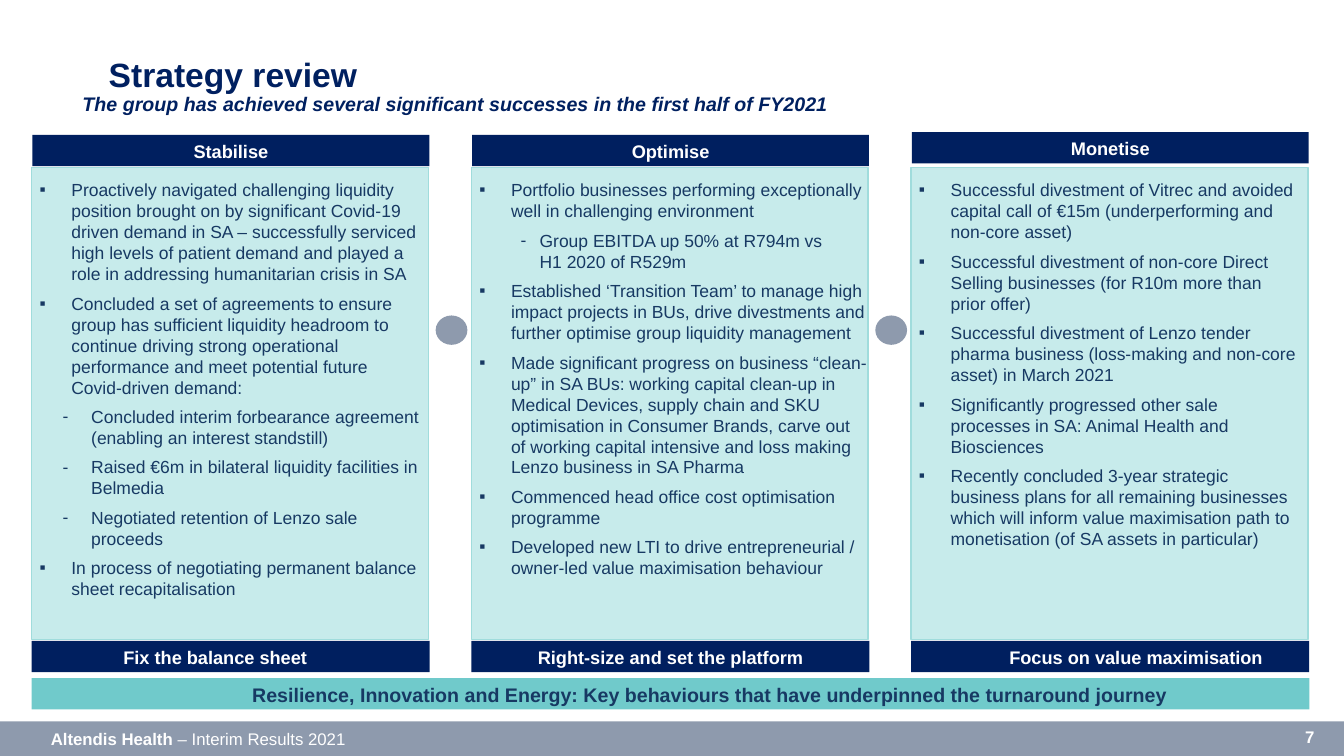
import pptx
import pptx.util
import pptx.dml.color
import pptx.enum.shapes
import pptx.enum.text
import pptx.oxml.ns
from lxml import etree
from pptx.util import Cm

COLORS = {
    "navy": "001F5F", "title": "002060", "text": "173963", "white": "FFFFFF",
    "panel": "C7EBEB", "edge": "A0DCDC", "teal": "70CACB", "gray": "8E9AAD",
}
FONT = "Arial"
SHAPE = pptx.enum.shapes.MSO_SHAPE
ALIGN = pptx.enum.text.PP_ALIGN
ANCHOR = pptx.enum.text.MSO_ANCHOR

# Bullet styles: sign, left margin and hanging indent in cm
MAIN = ("▪", 1.0, 0.8)
DASH = ("-", 1.5, 0.72)
DEEP = ("-", 1.72, 0.48)

LEFT, STEP, WIDTH = 0.8, 11.08, 10.0

# Heading, heading top, foot, foot inset, foot alignment, right inset, items
COLUMNS = [
    ("Stabilise", 3.4, "Fix the balance sheet", 2.31, ALIGN.LEFT, 0.2, [
        (MAIN, "Proactively navigated challenging liquidity position brought on by "
               "significant Covid-19 driven demand in SA – successfully serviced high "
               "levels of patient demand and played a role in addressing humanitarian "
               "crisis in SA"),
        (MAIN, "Concluded a set of agreements to ensure group has sufficient liquidity "
               "headroom to continue driving strong operational performance and meet "
               "potential future Covid-driven demand:"),
        (DASH, "Concluded interim forbearance agreement (enabling an interest standstill)"),
        (DASH, "Raised €6m in bilateral liquidity facilities in Belmedia"),
        (DASH, "Negotiated retention of Lenzo sale proceeds"),
        (MAIN, "In process of negotiating permanent balance sheet recapitalisation"),
    ]),
    ("Optimise", 3.4, "Right-size and set the platform", 0, ALIGN.CENTER, 0, [
        (MAIN, "Portfolio businesses performing exceptionally well in challenging "
               "environment"),
        (DEEP, "Group EBITDA up 50% at R794m vs\vH1 2020 of R529m"),
        (MAIN, "Established ‘Transition Team’ to manage high impact projects in BUs, "
               "drive divestments and further optimise group liquidity management"),
        (MAIN, "Made significant progress on business “clean-up” in SA BUs: working "
               "capital clean-up in Medical Devices, supply chain and SKU optimisation "
               "in Consumer Brands, carve out of working capital intensive and loss "
               "making Lenzo business in SA Pharma"),
        (MAIN, "Commenced head office cost optimisation programme"),
        (MAIN, "Developed new LTI to drive entrepreneurial / owner-led value "
               "maximisation behaviour"),
    ]),
    ("Monetise", 3.33, "Focus on value maximisation", 1.3, ALIGN.CENTER, 0.2, [
        (MAIN, "Successful divestment of Vitrec and avoided capital call of €15m "
               "(underperforming and non-core asset)"),
        (MAIN, "Successful divestment of non-core Direct Selling businesses (for R10m "
               "more than prior offer)"),
        (MAIN, "Successful divestment of Lenzo tender pharma business (loss-making and "
               "non-core asset) in March 2021"),
        (MAIN, "Significantly progressed other sale processes in SA: Animal Health and "
               "Biosciences"),
        (MAIN, "Recently concluded 3-year strategic business plans for all remaining "
               "businesses which will inform value maximisation path to monetisation "
               "(of SA assets in particular)"),
    ]),
]


def color(name):
    return pptx.dml.color.RGBColor.from_string(COLORS[name])


def style(para, size, tint, bold=False, italic=False):
    for run in para.runs:
        font = run.font
        font.name, font.size = FONT, pptx.util.Pt(size)
        font.bold, font.italic = bold, italic
        font.color.rgb = color(tint)


def fit(frame, left=0, top=0, right=0):
    frame.word_wrap = True
    frame.vertical_anchor = ANCHOR.TOP
    frame.margin_left, frame.margin_top = Cm(left), Cm(top)
    frame.margin_right, frame.margin_bottom = Cm(right), 0


def block(slide, kind, box, fill, edge=None):
    shape = slide.shapes.add_shape(kind, *map(Cm, box))
    shape.shadow.inherit = False
    shape.fill.solid()
    shape.fill.fore_color.rgb = color(fill)
    if edge:
        shape.line.color.rgb = color(edge)
        shape.line.width = pptx.util.Pt(1)
    else:
        shape.line.fill.background()
    return shape


def bar(slide, box, fill, text, size, tint, inset=0, align=ALIGN.CENTER):
    """Add a filled strip with one bold line of text."""
    frame = block(slide, SHAPE.RECTANGLE, box, fill).text_frame
    fit(frame, inset, 0.13)
    frame.text = text
    para = frame.paragraphs[0]
    para.alignment = align
    style(para, size, tint, bold=True)


def label(slide, box, text, size, tint, **look):
    frame = slide.shapes.add_textbox(*map(Cm, box)).text_frame
    fit(frame)
    frame.text = text
    para = frame.paragraphs[0]
    style(para, size, tint, **look)
    return para


def bullet(para, sign, margin, hang):
    props = para._p.get_or_add_pPr()
    props.set("marL", str(Cm(margin)))
    props.set("indent", str(-Cm(hang)))
    etree.SubElement(props, pptx.oxml.ns.qn("a:buFont")).set("typeface", FONT)
    etree.SubElement(props, pptx.oxml.ns.qn("a:buChar")).set("char", sign)


def panel(slide, left, right, items):
    box = (left, 4.22, WIDTH, 11.89)
    frame = block(slide, SHAPE.RECTANGLE, box, "panel", "edge").text_frame
    fit(frame, 0, 0.3, right)
    frame.text = "\n".join(text for _, text in items)
    for i, (para, (kind, _)) in enumerate(zip(frame.paragraphs, items)):
        bullet(para, *kind)
        para.alignment = ALIGN.LEFT
        para.level = 0 if kind is MAIN else 1
        if i:
            para.space_before = pptx.util.Pt(6)
        style(para, 12.5, "text")


def title(slide, text):
    shape = slide.shapes.title
    shape.left, shape.top, shape.width, shape.height = map(Cm, (2.74, 1.36, 27.86, 1))
    frame = shape.text_frame
    fit(frame)
    frame.auto_size = pptx.enum.text.MSO_AUTO_SIZE.NONE
    frame.text = text
    frame.paragraphs[0].alignment = ALIGN.LEFT
    style(frame.paragraphs[0], 24, "title", bold=True)


def footer(slide):
    block(slide, SHAPE.RECTANGLE, (0, 18.18, 33.87, 0.87), "gray")
    para = label(slide, (1.28, 18.36, 14.5, 0.55), "Altendis Health", 12, "white")
    para.add_run().text = " – Interim Results 2021"
    style(para, 12, "white")
    para.runs[0].font.bold = True
    label(slide, (32.89, 18.31, 0.46, 0.53), "7", 12, "white", bold=True)


def main():
    deck = pptx.Presentation()
    deck.slide_width, deck.slide_height = Cm(33.87), Cm(19.05)
    slide = deck.slides.add_slide(deck.slide_layouts[5])
    footer(slide)
    title(slide, "Strategy review")
    label(slide, (2.08, 2.31, 30.7, 0.64),
          "The group has achieved several significant successes in the first half of FY2021",
          14, "title", bold=True, italic=True)
    for i, (head, top, foot, inset, align, right, items) in enumerate(COLUMNS):
        left = LEFT + i * STEP
        panel(slide, left, right, items)
        bar(slide, (left + 0.02, top, WIDTH, 0.79), "navy", head, 13, "white")
        bar(slide, (left, 16.15, WIDTH + 0.03, 0.79), "navy", foot, 13, "white",
            inset, align)
        if i:
            block(slide, SHAPE.OVAL, (left - 0.9, 7.95, 0.8, 0.74), "gray")
    bar(slide, (LEFT, 17.09, 32.2, 0.79), "teal",
        "Resilience, Innovation and Energy: Key behaviours that have underpinned "
        "the turnaround journey", 14, "text", 2)
    deck.save("out.pptx")


if __name__ == "__main__":
    main()
